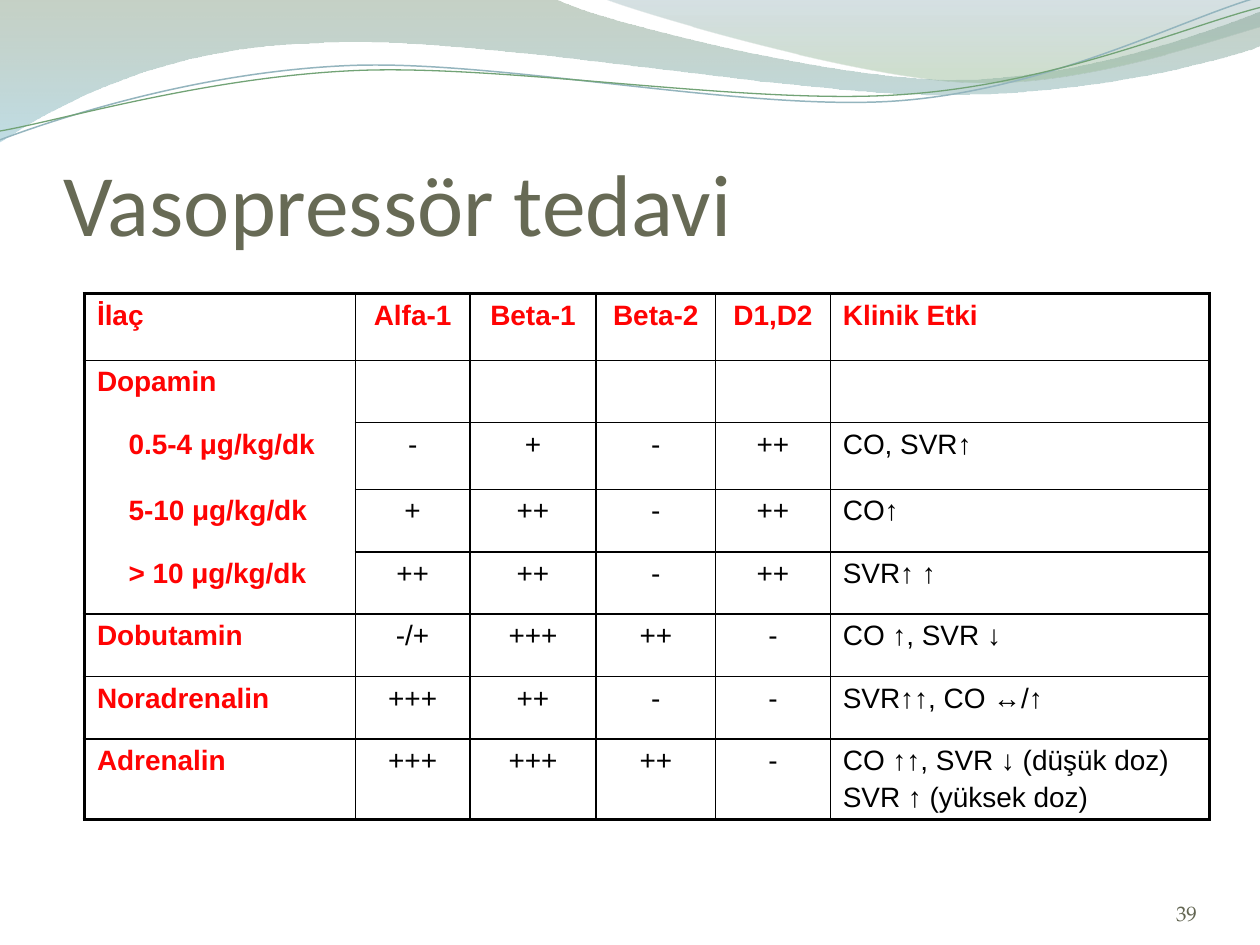
from dataclasses import dataclass
from math import cos, radians, sin

from lxml.etree import SubElement
from pptx import Presentation
from pptx.dml.color import RGBColor
from pptx.enum.text import MSO_ANCHOR, PP_ALIGN
from pptx.oxml.ns import qn
from pptx.util import Inches, Pt


@dataclass(frozen=True)
class Theme:
    """Colours, fonts and type sizes of the slide."""
    title: str = "676A55"
    label: str = "FF0303"
    ink: str = "000000"
    number: str = "626551"
    title_font: str = "Calibri"
    table_font: str = "Arial"
    number_font: str = "TeX Gyre Pagella"
    title_size: float = 50
    table_size: float = 16
    number_size: float = 12
    inner_line: float = 1
    outer_line: float = 2.25


THEME = Theme()
NO_STYLE = "{2D5ABB26-0587-4C30-8999-92F81FD0307C}"
WAVE_TILT = 2.7
COLS = [2.15, 0.91, 1, 0.95, 0.91, 3.01]
SHORT_ROW = 0.99 / 2
ROWS = [0.53, SHORT_ROW, 0.53] + [SHORT_ROW] * 5
DOPAMINE_ROWS = range(1, 5)
DATA = [
    ["İlaç", "Alfa-1", "Beta-1", "Beta-2", "D1,D2", "Klinik Etki"],
    ["Dopamin", "", "", "", "", ""],
    ["0.5-4 μg/kg/dk", "-", "+", "-", "++", "CO, SVR↑"],
    ["5-10 μg/kg/dk", "+", "++", "-", "++", "CO↑"],
    ["> 10 μg/kg/dk", "++", "++", "-", "++", "SVR↑ ↑"],
    ["Dobutamin", "-/+", "+++", "++", "-", "CO ↑, SVR ↓"],
    ["Noradrenalin", "+++", "++", "-", "-", "SVR↑↑, CO ↔/↑"],
    ["Adrenalin", "+++", "+++", "++", "-",
     "CO ↑↑, SVR ↓ (düşük doz)\nSVR ↑ (yüksek doz)"],
]
LEFT_BAND = [
    [(0, 0)],
    [(4.4, -0.01)],
    [(4.76, 0.17), (6.64, 0.63), (7.58, 0.63)],
    [(8.53, 0.63), (9.58, 0.26), (10, 0.09)],
    [(10.01, 0.36)],
    [(9.83, 0.44), (8.7, 0.76), (7.46, 0.75)],
    [(6.22, 0.75), (3.82, 0.28), (2.57, 0.34)],
    [(1.29, 0.36), (0.46, 0.83), (-0.01, 1.13)],
]
RIGHT_BAND = [
    [(4.79, -0.01)],
    [(5.09, 0.11), (6.82, 0.62), (7.69, 0.65)],
    [(8.56, 0.69), (9.61, 0.32), (10, 0.21)],
    [(10, 0)],
]
BLUE_WAVE = [
    [(0, 1.11)],
    [(0.48, 0.93), (1.58, 0.57), (2.77, 0.52)],
    [(3.95, 0.47), (5.93, 0.89), (7.13, 0.8)],
    [(8.33, 0.71), (9.38, 0.15), (9.98, -0.02)],
]
GREEN_WAVE = [
    [(0, 1.04)],
    [(0.47, 0.96), (1.64, 0.61), (2.83, 0.56)],
    [(4.03, 0.51), (5.97, 0.84), (7.17, 0.75)],
    [(8.36, 0.67), (9.41, 0.21), (10, 0.06)],
]


def add_curve(s, segments, close):
    """Draw a freeform whose three-point segments are cubic curves."""
    start, *points = [(Inches(x), Inches(y)) for seg in segments for x, y in seg]
    builder = s.shapes.build_freeform(*start)
    builder.add_line_segments(points, close=close)
    sp = builder.convert_to_shape()
    sp.shadow.inherit = False
    lines = iter(list(sp._element.iter(qn("a:lnTo"))))
    for segment in segments[1:]:
        first, *others = [next(lines) for _ in segment]
        if others:
            first.tag = qn("a:cubicBezTo")
        for line in others:
            first.append(line[0])
            line.getparent().remove(line)
    return sp


def add_band(s, segments, stops):
    """Add a closed band with a translucent top-to-bottom gradient."""
    sp = add_curve(s, segments, True)
    sp.line.fill.background()
    sp.fill.gradient()
    sp.fill.gradient_angle = 270
    for stop, (position, color, _) in zip(sp.fill.gradient_stops, stops):
        stop.position = position
        stop.color.rgb = RGBColor.from_string(color)
    colors = sp._element.spPr.iter(qn("a:srgbClr"))
    for element, (_, _, opacity) in zip(colors, stops):
        SubElement(element, qn("a:alpha"), val=str(opacity * 1000))


def turn(point, center, degrees):
    """Return the point turned clockwise about the center."""
    dx, dy = point[0] - center[0], point[1] - center[1]
    c, n = cos(radians(degrees)), sin(radians(degrees))
    return center[0] + dx * c - dy * n, center[1] + dx * n + dy * c


def add_wave(s, segments, center, color, width):
    """Add an open wave line tilted about its center."""
    level = [[turn(point, center, WAVE_TILT) for point in seg] for seg in segments]
    sp = add_curve(s, level, False)
    sp.rotation = 360 - WAVE_TILT
    sp.fill.background()
    sp.line.color.rgb = RGBColor.from_string(color)
    sp.line.width = Pt(width)


def add_run(p, text, font, size, color, bold=False):
    """Add one formatted run to a paragraph."""
    r = p.add_run()
    r.text = text
    r.font.name = font
    r.font.size = Pt(size)
    r.font.bold = bold
    r.font.color.rgb = RGBColor.from_string(color)


def format_frame(tf):
    """Anchor a frame at the bottom without side insets."""
    tf.word_wrap = True
    tf.vertical_anchor = MSO_ANCHOR.BOTTOM
    tf.margin_left = tf.margin_right = tf.margin_bottom = 0


def set_title(s, text):
    """Place and fill the title above the decoration."""
    title = s.shapes.title
    title.left, title.top, title.width, title.height = map(Inches, (0.5, 0.77, 9, 1.25))
    s.shapes._spTree.append(title._element)
    format_frame(title.text_frame)
    p = title.text_frame.paragraphs[0]
    p.alignment = PP_ALIGN.LEFT
    add_run(p, text, THEME.title_font, THEME.title_size, THEME.title)


def set_borders(cell, row, col):
    """Draw a heavy outer frame, thin inner lines and an open dopamine group."""
    last_row, last_col = len(ROWS) - 1, len(COLS) - 1
    grouped = col == 0 and row in DOPAMINE_ROWS
    edges = {
        "L": (col == 0, False),
        "R": (col == last_col, False),
        "T": (row == 0, grouped and row != DOPAMINE_ROWS[0]),
        "B": (row == last_row, grouped and row != DOPAMINE_ROWS[-1]),
    }
    tc_pr = cell._tc.get_or_add_tcPr()
    for side, (outer, hidden) in edges.items():
        width = THEME.outer_line if outer else THEME.inner_line
        ln = SubElement(tc_pr, qn(f"a:ln{side}"), w=str(int(Pt(width))))
        if hidden:
            SubElement(ln, qn("a:noFill"))
        else:
            fill = SubElement(ln, qn("a:solidFill"))
            SubElement(fill, qn("a:srgbClr"), val=THEME.ink)


def fill_cell(cell, text, row, col):
    """Write and format one table cell."""
    set_borders(cell, row, col)
    cell.fill.background()
    label = row == 0 or col == 0
    for i, line in enumerate(text.splitlines()):
        p = cell.text_frame.add_paragraph() if i else cell.text_frame.paragraphs[0]
        p.alignment = PP_ALIGN.LEFT if col in (0, len(COLS) - 1) else PP_ALIGN.CENTER
        p_pr = p._p.get_or_add_pPr()
        SubElement(SubElement(p_pr, qn("a:spcBef")), qn("a:spcPct"), val="20000")
        if col == 0 and row in DOPAMINE_ROWS[1:]:
            p_pr.set("marL", str(Inches(0.25)))
        add_run(p, line, THEME.table_font, THEME.table_size,
                THEME.label if label else THEME.ink, label)


def add_drug_table(s):
    """Add the table of vasopressor drugs."""
    table = s.shapes.add_table(len(ROWS), len(COLS), Inches(0.67), Inches(2.33),
                               Inches(sum(COLS)), Inches(sum(ROWS))).table
    table.first_row = table.horz_banding = False
    table._tbl.tblPr.find(qn("a:tableStyleId")).text = NO_STYLE
    for column, width in zip(table.columns, COLS):
        column.width = Inches(width)
    for row, (height, texts) in enumerate(zip(ROWS, DATA)):
        table.rows[row].height = Inches(height)
        for col, text in enumerate(texts):
            fill_cell(table.cell(row, col), text, row, col)


def add_page_number(s, text):
    """Add the page number at the lower right."""
    tf = s.shapes.add_textbox(*map(Inches, (8.67, 6.95, 0.83, 0.4))).text_frame
    format_frame(tf)
    tf.margin_top = 0
    p = tf.paragraphs[0]
    p.alignment = PP_ALIGN.RIGHT
    add_run(p, text, THEME.number_font, THEME.number_size, THEME.number)


def main():
    """Build and save the slide."""
    prs = Presentation()
    prs.slide_width, prs.slide_height = Inches(10), Inches(7.5)
    s = prs.slides.add_slide(prs.slide_layouts[5])
    add_band(s, LEFT_BAND, [(0, "809980", 45), (1, "8DC1CF", 55)])
    add_band(s, RIGHT_BAND, [(0, "779BA4", 30), (0.8, "96B996", 45)])
    add_wave(s, BLUE_WAVE, (4.99, 0.58), "94B5BE", 0.85)
    add_wave(s, GREEN_WAVE, (5, 0.59), "72A376", 0.75)
    set_title(s, "Vasopressör tedavi")
    add_drug_table(s)
    add_page_number(s, "39")
    prs.save("out.pptx")


if __name__ == "__main__":
    main()
